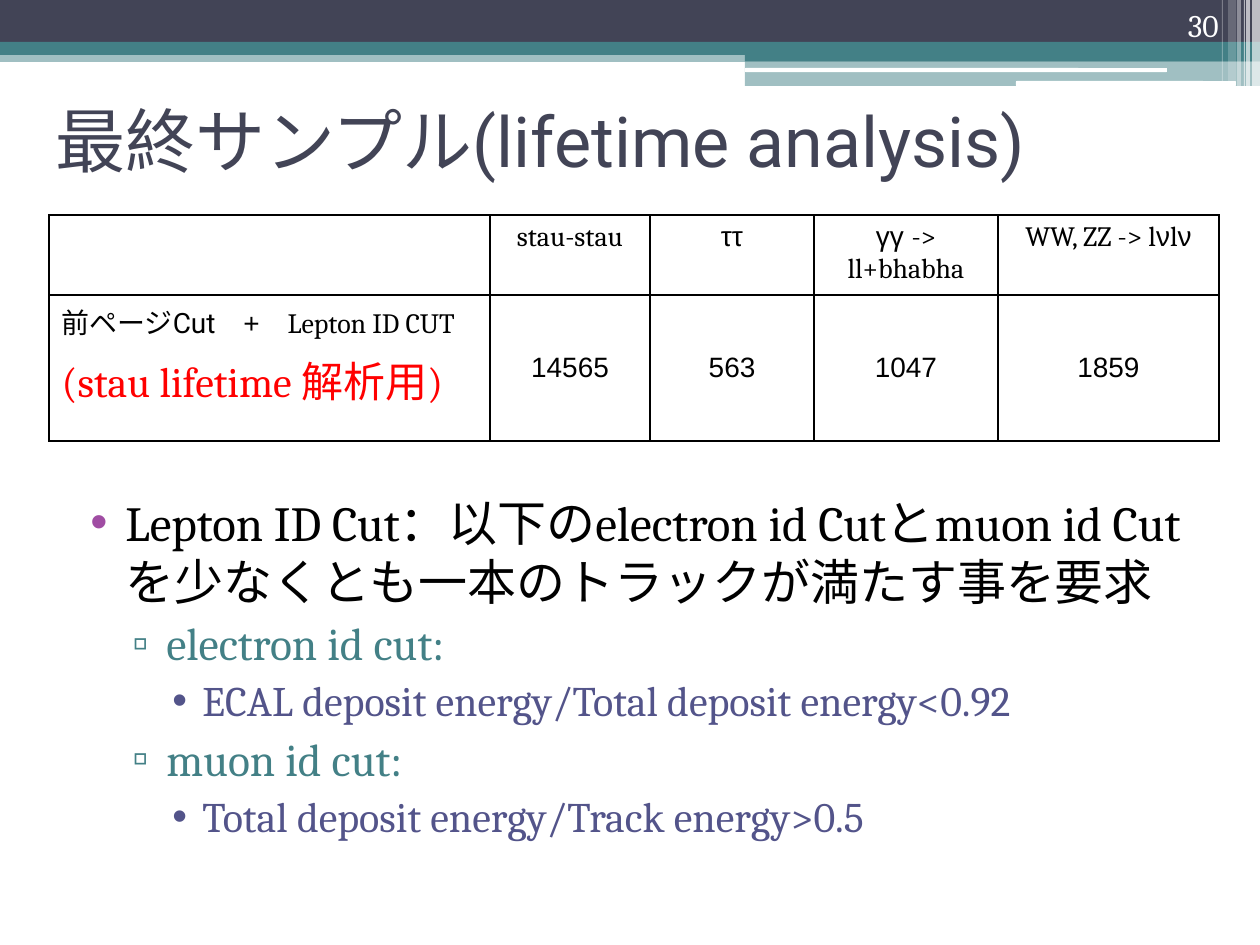
from lxml import etree
from pptx import Presentation
from pptx.dml.color import RGBColor
from pptx.enum.shapes import MSO_SHAPE
from pptx.enum.text import MSO_ANCHOR, PP_ALIGN
from pptx.oxml.ns import qn
from pptx.util import Emu, Pt

RECT, ROUNDED = MSO_SHAPE.RECTANGLE, MSO_SHAPE.ROUNDED_RECTANGLE
TOP, MIDDLE, BOTTOM = MSO_ANCHOR.TOP, MSO_ANCHOR.MIDDLE, MSO_ANCHOR.BOTTOM
LEFT, CENTER, RIGHT = PP_ALIGN.LEFT, PP_ALIGN.CENTER, PP_ALIGN.RIGHT

COLORS = {
    "navy": "424456", "teal": "438086", "white": "FFFFFF", "black": "000000",
    "red": "FF0000", "purple": "A04DA3", "indigo": "53548A",
}

BANDS = [
    (RECT, (0, 50, 1260, 12), "teal", 50),
    (RECT, (0, 0, 1260, 43), "navy", 100),
    (RECT, (0, 42, 1260, 13), "teal", 100),
    (RECT, (745, 49, 515, 12), "teal", 100),
    (RECT, (745, 61, 515, 25), "teal", 50),
    (ROUNDED, (745, 68, 422, 4), "white", 100),
    (ROUNDED, (1016, 81, 220, 5), "white", 100),
]
STRIPES = [
    (1252, 8, 86, 65), (1246, 4, 86, 65), (1244, 1, 86, 60),
    (1237, 4, 86, 40), (1228, 8, 81, 20), (1222, 1, 81, 30),
]

TITLE = "最終サンプル(lifetime analysis)"
PAGE = "30"

COLUMNS = [441, 160, 164, 184, 221]
ROWS = [77, 146]
HEADER = [
    [],
    [("stau-stau", "Cambria")],
    [("ττ", "Arial")],
    [("γγ ", "Arial"), ("-> ll+bhabha", "Cambria")],
    [("WW, ZZ -> l", "Cambria"), ("ν", "Arial"), ("l", "Cambria"), ("ν", "Arial")],
]
CUT = [("前ページ", "Arial"), ("Cut　", "Roboto"), ("+　", "Arial"), ("Lepton ID CUT", "Cambria")]
PURPOSE = [("(stau lifetime 解析用)", "Cambria")]
COUNTS = ["14565", "563", "1047", "1859"]

LEVELS = [
    {"margin": 50, "hang": 35, "bullet": "•", "bullet_color": "purple", "size": 28, "color": "black"},
    {"margin": 91, "hang": 34, "bullet": "▫", "bullet_color": "teal", "size": 26, "color": "teal"},
    {"margin": 127, "hang": 30, "bullet": "•", "bullet_color": "indigo", "size": 24, "color": "indigo"},
]
CUTS = [
    (0, "Lepton ID Cut：以下のelectron id Cutとmuon id Cutを少なくとも一本のトラックが満たす事を要求"),
    (1, "electron id cut:"),
    (2, "ECAL deposit energy/Total deposit energy<0.92"),
    (1, "muon id cut:"),
    (2, "Total deposit energy/Track energy>0.5"),
]


def px(n):
    return Emu(round(n * 914400 / 126))


def set_font(font, size, color, name=None):
    font.size = Pt(size)
    font.color.rgb = RGBColor.from_string(COLORS[color])
    if name:
        font.name = name


def add_band(slide, kind, box, color, alpha):
    band = slide.shapes.add_shape(kind, *map(px, box))
    band.shadow.inherit = False
    band.fill.solid()
    band.fill.fore_color.rgb = RGBColor.from_string(COLORS[color])
    band.line.fill.background()
    if alpha < 100:
        tint = band.fill._xPr.find(qn("a:solidFill"))[0]
        etree.SubElement(tint, qn("a:alpha"), val=str(alpha * 1000))


def add_text(slide, box, anchor):
    frame = slide.shapes.add_textbox(*map(px, box)).text_frame
    frame.word_wrap = True
    frame.vertical_anchor = anchor
    return frame


def add_line(slide, box, anchor, text, align, size, color, name):
    line = add_text(slide, box, anchor).paragraphs[0]
    line.text = text
    line.alignment = align
    set_font(line.font, size, color, name)


def write_runs(paragraph, parts, align, size=16, color="black"):
    paragraph.alignment = align
    set_font(paragraph.font, size, color)
    names = {name for _, name in parts}
    if len(names) == 1:
        paragraph.font.name = parts[0][1]
    for text, name in parts:
        run = paragraph.add_run()
        run.text = text
        if len(names) > 1:
            run.font.name = name


def style_cell(cell, anchor):
    properties = cell._tc.get_or_add_tcPr()
    for side in ("lnL", "lnR", "lnT", "lnB"):
        border = etree.SubElement(properties, qn("a:" + side), w=str(Pt(1)))
        fill = etree.SubElement(border, qn("a:solidFill"))
        etree.SubElement(fill, qn("a:srgbClr"), val=COLORS["black"])
    cell.fill.background()
    cell.vertical_anchor = anchor


def add_samples(slide):
    table = slide.shapes.add_table(
        len(ROWS), len(COLUMNS), px(49), px(215), px(sum(COLUMNS)), px(sum(ROWS))).table
    table.first_row = table.horz_banding = False
    for column, width in zip(table.columns, COLUMNS):
        column.width = px(width)
    for row, height in zip(table.rows, ROWS):
        row.height = px(height)
    for i, parts in enumerate(HEADER):
        style_cell(table.cell(0, i), TOP)
        write_runs(table.cell(0, i).text_frame.paragraphs[0], parts, CENTER)
    selection = table.cell(1, 0)
    style_cell(selection, TOP)
    write_runs(selection.text_frame.paragraphs[0], CUT, LEFT)
    purpose = selection.text_frame.add_paragraph()
    purpose.space_before = Pt(4)
    write_runs(purpose, PURPOSE, LEFT, 24, "red")
    for i, count in enumerate(COUNTS, 1):
        style_cell(table.cell(1, i), MIDDLE)
        write_runs(table.cell(1, i).text_frame.paragraphs[0], [(count, "Arial")], CENTER)


def add_cuts(slide):
    frame = add_text(slide, (63, 486, 1134, 384), TOP)
    for i, (depth, text) in enumerate(CUTS):
        level = LEVELS[depth]
        item = frame.add_paragraph() if i else frame.paragraphs[0]
        item.text = text
        item.level = depth
        if i:
            item.space_before = Pt(3)
        properties = item._p.get_or_add_pPr()
        properties.set("marL", str(px(level["margin"])))
        properties.set("indent", str(-px(level["hang"])))
        tint = etree.SubElement(properties, qn("a:buClr"))
        etree.SubElement(tint, qn("a:srgbClr"), val=COLORS[level["bullet_color"]])
        etree.SubElement(properties, qn("a:buFont"), typeface="Arial")
        etree.SubElement(properties, qn("a:buChar"), char=level["bullet"])
        set_font(item.font, level["size"], level["color"], "Cambria")


def main():
    deck = Presentation()
    deck.slide_width, deck.slide_height = px(1260), px(945)
    slide = deck.slides.add_slide(deck.slide_layouts[6])
    for band in BANDS:
        add_band(slide, *band)
    for left, width, height, alpha in STRIPES:
        add_band(slide, RECT, (left, 0, width, height), "white", alpha)
    add_line(slide, (43, 60, 1134, 158), MIDDLE, TITLE, LEFT, 40, "navy", "Roboto")
    add_samples(slide)
    add_cuts(slide)
    add_line(slide, (1126, 0, 105, 50), BOTTOM, PAGE, RIGHT, 18, "white", "Cambria")
    deck.save("out.pptx")


if __name__ == "__main__":
    main()
